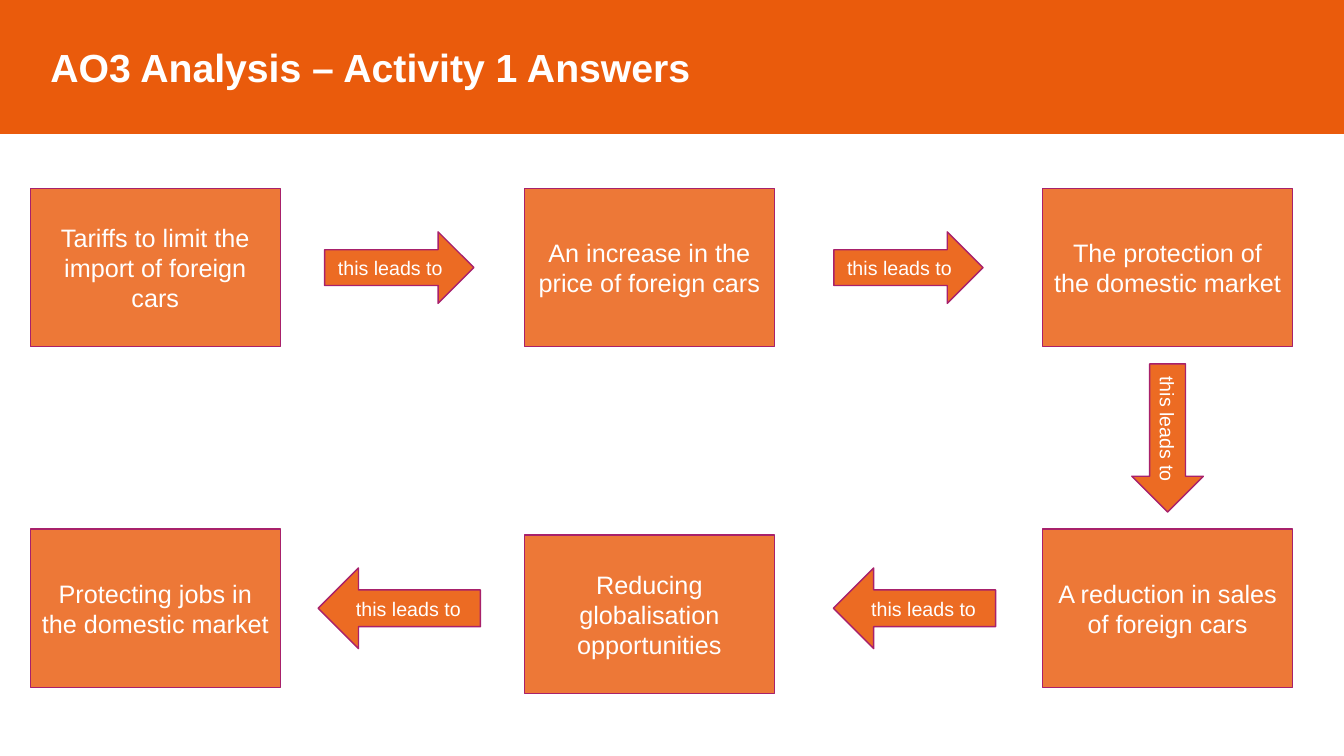
from lxml import etree
from pptx import Presentation, util as u
from pptx.dml.color import RGBColor
from pptx.enum import shapes, text
from pptx.oxml.ns import qn

ORANGE, PLUM, WHITE = "EA5B0C", "A8216B", "FFFFFF"
KIND = shapes.MSO_SHAPE

deck = Presentation()
deck.slide_width, deck.slide_height = u.Inches(13.33), u.Inches(7.5)
slide = deck.slides.add_slide(deck.slide_layouts[6])


def color(code):
    return RGBColor.from_string(code)


def block(kind, spot, words, size, edge=PLUM, alpha=100):
    """Add a filled shape with centred white text; alpha is in percent."""
    shape = slide.shapes.add_shape(kind, *[u.Inches(n) for n in spot])
    shape.shadow.inherit = False
    shape.fill.solid()
    shape.fill.fore_color.rgb = color(ORANGE)
    if alpha < 100:
        tint = shape.fill._xPr.find(qn("a:solidFill"))[0]
        etree.SubElement(tint, qn("a:alpha"), val=str(alpha * 1000))
    shape.line.color.rgb = color(edge)
    shape.line.width = u.Pt(1)
    frame = shape.text_frame
    frame.word_wrap = True
    frame.vertical_anchor = text.MSO_ANCHOR.MIDDLE
    para = frame.paragraphs[0]
    para.text = words
    para.alignment = text.PP_ALIGN.CENTER
    para.font.name, para.font.size = "Arial", u.Pt(size)
    para.font.color.rgb = color(WHITE)
    return shape


# Title band
band = block(KIND.RECTANGLE, (0, 0, 13.33, 1.32),
             "AO3 Analysis – Activity 1 Answers", 28, edge=ORANGE)
band.text_frame.margin_left = u.Inches(0.5)
title = band.text_frame.paragraphs[0]
title.alignment = text.PP_ALIGN.LEFT
title.font.bold = True

# Steps of the chain: three columns, two rows
cols, rows = (0.3, 5.2, 10.34), (1.87, 5.25)
wide, high = 2.48, 1.57
steps = [
    (0, 0, 0, "Tariffs to limit the import of foreign cars"),
    (1, 0, 0, "An increase in the price of foreign cars"),
    (2, 0, 0, "The protection of the domestic market"),
    (2, 1, 0, "A reduction in sales of foreign cars"),
    (1, 1, 0.06, "Reducing globalisation opportunities"),
    (0, 1, 0, "Protecting jobs in the domestic market"),
]
for col, row, drop, words in steps:
    block(KIND.RECTANGLE, (cols[col], rows[row] + drop, wide, high),
          words, 18, alpha=82)

# Arrows between the steps: kind, centre x, row centre y, size, turn
top, low = (y + high / 2 for y in rows)
right, left = KIND.RIGHT_ARROW, KIND.LEFT_ARROW
arrows = [
    (right, 3.96, top, 1.48, 0.71, 0),
    (right, 9.01, top, 1.48, 0.71, 0),
    (right, cols[2] + wide / 2, (top + low) / 2, 1.47, 0.71, 90),
    (left, 9.07, low, 1.61, 0.8, 0),
    (left, 3.96, low, 1.61, 0.8, 0),
]
for kind, x, y, w, h, turn in arrows:
    arrow = block(kind, (x - w / 2, y - h / 2, w, h),
                  "this leads to", 14, alpha=90)
    arrow.rotation = turn
    if kind == left:
        arrow.adjustments[0] = 0.455

deck.save("out.pptx")
